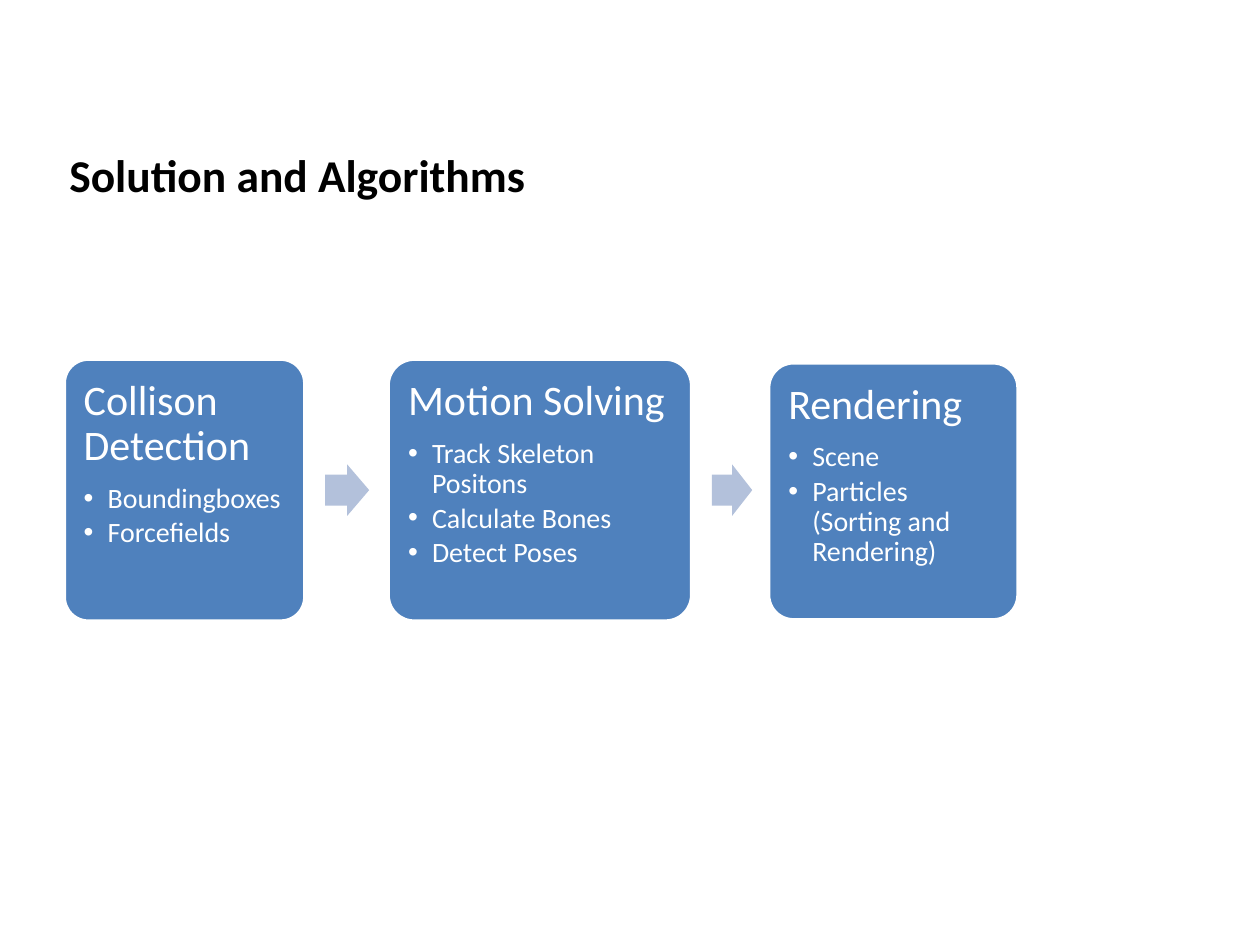
from pptx import Presentation, util as u
from pptx.dml.color import RGBColor
from pptx.enum import shapes, text
from lxml import etree

TITLE = "Solution and Algorithms"
# left, top, width, height, heading, bullets
STEPS = [
    (0.51, 2.85, 1.91, 2.08, "Collison Detection",
     ["Boundingboxes", "Forcefields"]),
    (3.08, 2.85, 2.41, 2.08, "Motion Solving",
     ["Track Skeleton Positons", "Calculate Bones", "Detect Poses"]),
    (6.1, 2.88, 1.98, 2.04, "Rendering",
     ["Scene", "Particles (Sorting and Rendering)"]),
]
ARROWS = [(2.58, 0.35), (5.65, 0.32)]  # left, width
MID, TALL = 3.89, 0.41  # arrow centre line and height
BLUE, PALE, WHITE, BLACK = "4F81BD", "B3C1DB", "FFFFFF", "000000"
A = "{http://schemas.openxmlformats.org/drawingml/2006/main}"


def color(code):
    return RGBColor.from_string(code)


def write(par, words, size=16, ink=WHITE, bold=False, after=0, lines=1.0,
          bullet=False):
    if bullet:
        props = par._p.get_or_add_pPr()
        step = u.Inches(0.19)
        props.set("marL", str(step))
        props.set("indent", str(-step))
        etree.SubElement(props, A + "buFont", typeface="Arial")
        etree.SubElement(props, A + "buChar", char="•")
    par.alignment = text.PP_ALIGN.LEFT
    par.line_spacing = lines
    par.space_after = u.Pt(after)
    run = par.add_run()
    run.text = words
    run.font.name = "Calibri"
    run.font.size = u.Pt(size)
    run.font.bold = bold
    run.font.color.rgb = color(ink)


def frame(shape, pad_x, pad_y, anchor):
    body = shape.text_frame
    body.word_wrap = True
    body.margin_left = body.margin_right = u.Inches(pad_x)
    body.margin_top = body.margin_bottom = u.Inches(pad_y)
    body.vertical_anchor = anchor
    return body


def draw(slide, kind, box, fill, adjust, edge=None):
    shape = slide.shapes.add_shape(kind, *map(u.Inches, box))
    shape.shadow.inherit = False
    for i, value in enumerate(adjust):
        shape.adjustments[i] = value
    shape.fill.solid()
    shape.fill.fore_color.rgb = color(fill)
    if edge:
        shape.line.color.rgb = color(edge)
        shape.line.width = u.Pt(2)
    else:
        shape.line.fill.background()
    return shape


def main():
    deck = Presentation()
    deck.slide_width, deck.slide_height = u.Inches(10), u.Inches(7.5)
    slide = deck.slides.add_slide(deck.slide_layouts[6])

    # Title
    title = slide.shapes.add_textbox(*map(u.Inches, (0.5, 0.35, 7.65, 1.25)))
    body = frame(title, 0.05, 0, text.MSO_ANCHOR.BOTTOM)
    write(body.paragraphs[0], TITLE, size=26, ink=BLACK, bold=True)

    # Process steps
    for *box, head, items in STEPS:
        card = draw(slide, shapes.MSO_SHAPE.ROUNDED_RECTANGLE, box, BLUE,
                    [0.1], edge=WHITE)
        body = frame(card, 0.1, 0.1, text.MSO_ANCHOR.TOP)
        write(body.paragraphs[0], head, size=24, after=8.4, lines=0.9)
        for item in items:
            write(body.add_paragraph(), item, after=2.4, lines=0.9,
                  bullet=True)

    # Arrows between steps
    for left, width in ARROWS:
        draw(slide, shapes.MSO_SHAPE.RIGHT_ARROW,
             (left, MID - TALL / 2, width, TALL), PALE, [0.6, 0.5])

    deck.save("out.pptx")


if __name__ == "__main__":
    main()
